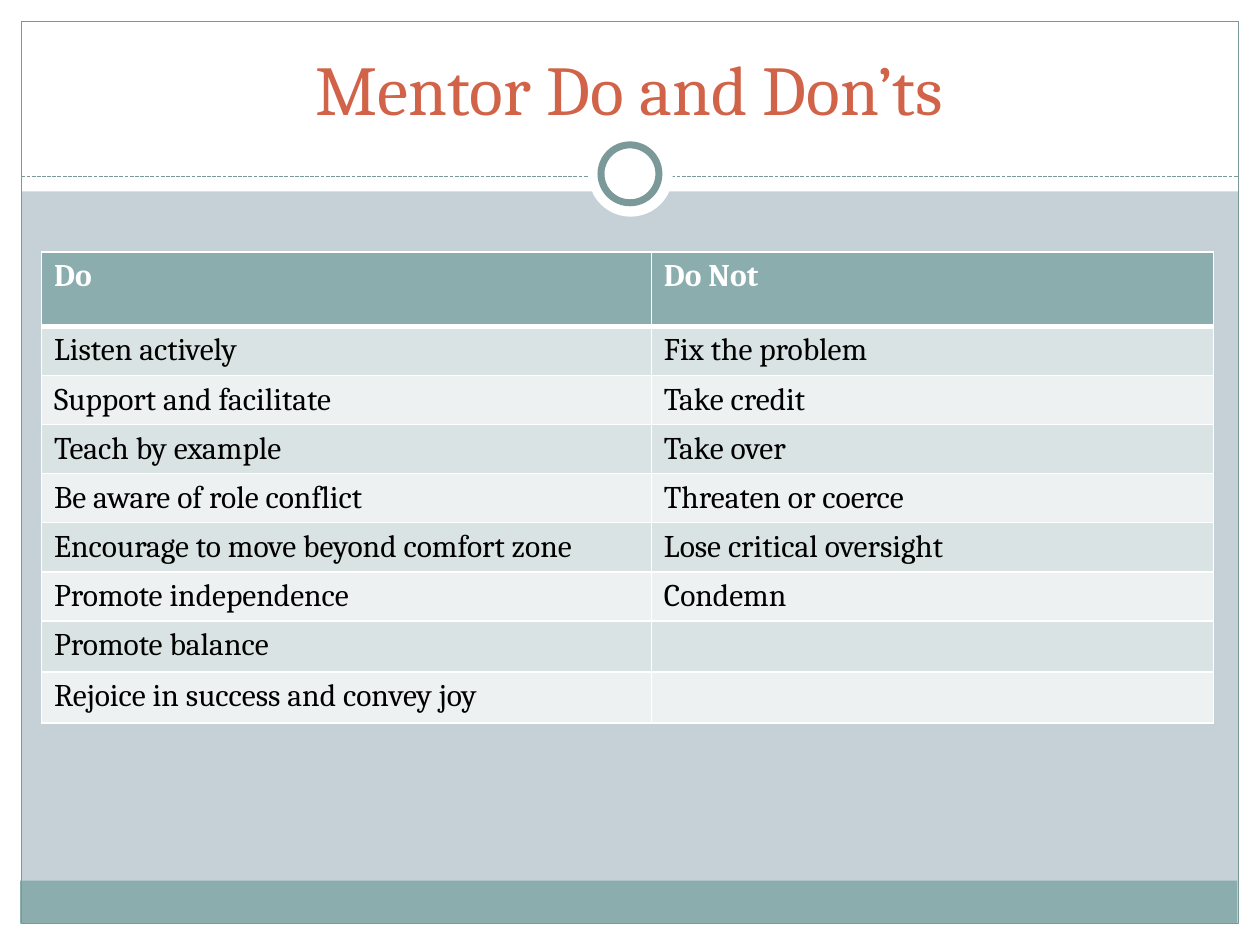
from typing import NamedTuple, Optional

from lxml.etree import SubElement
from pptx import Presentation
from pptx.dml.color import RGBColor
from pptx.enum.dml import MSO_LINE
from pptx.enum.shapes import MSO_CONNECTOR, MSO_SHAPE as Kind
from pptx.enum.text import MSO_ANCHOR, MSO_AUTO_SIZE, PP_ALIGN
from pptx.oxml import parse_xml
from pptx.oxml.ns import nsdecls, qn
from pptx.util import Inches, Pt

WHITE = RGBColor(0xFF, 0xFF, 0xFF)
BLACK = RGBColor(0x00, 0x00, 0x00)
BACK = RGBColor(0xC5, 0xD1, 0xD7)
TEAL = RGBColor(0x8C, 0xAD, 0xAE)
EDGE = RGBColor(0x7C, 0x99, 0x9A)
RUST = RGBColor(0xD1, 0x63, 0x49)
BANDS = (RGBColor(0xDA, 0xE3, 0xE3), RGBColor(0xEE, 0xF1, 0xF2))
FACE = "Cambria"


class Panel(NamedTuple):
    left: float
    top: float
    width: float
    height: float
    fill: Optional[RGBColor] = WHITE
    line: float = 0
    kind: Kind = Kind.RECTANGLE


FRAME = (
    Panel(0, 7.33, 10, 0.17),
    Panel(0, 0, 10, 1.52),
    Panel(0, 0, 0.17, 7.5),
    Panel(9.83, 0, 0.17, 7.5),
    Panel(0.16, 6.99, 9.66, 0.34, TEAL),
    Panel(0.17, 0.17, 9.66, 7.16, None, 0.75),
)
RING = (
    Panel(4.67, 1.05, 0.67, 0.67, kind=Kind.OVAL),
    Panel(4.77, 1.15, 0.46, 0.46, WHITE, 4, Kind.OVAL),
)
ROWS = (
    ("Do", "Do Not"),
    ("Listen actively", "Fix the problem"),
    ("Support and facilitate", "Take credit"),
    ("Teach by example", "Take over"),
    ("Be aware of role conflict", "Threaten or coerce"),
    ("Encourage to move beyond comfort zone", "Lose critical oversight"),
    ("Promote independence", "Condemn"),
    ("Promote balance", ""),
    ("Rejoice in success and convey joy", ""),
)
COLS = (4.84, 4.46)
HEAD, ROW = 0.59, 0.39


def add_panel(shapes, panel: Panel) -> None:
    box = (Inches(n) for n in panel[:4])
    shape = shapes.add_shape(panel.kind, *box)
    shape.shadow.inherit = False
    if panel.fill is None:
        shape.fill.background()
    else:
        shape.fill.solid()
        shape.fill.fore_color.rgb = panel.fill
    if panel.line:
        shape.line.color.rgb = EDGE
        shape.line.width = Pt(panel.line)
    else:
        shape.line.fill.background()


def add_rule(shapes) -> None:
    """Draw the dashed line under the title."""
    y = Inches(1.4)
    rule = shapes.add_connector(
        MSO_CONNECTOR.STRAIGHT, Inches(0.17), y, Inches(9.83), y)
    rule.line.color.rgb = EDGE
    rule.line.width = Pt(0.75)
    rule.line.dash_style = MSO_LINE.SQUARE_DOT
    SubElement(rule.element.spPr, qn("a:effectLst"))


def set_font(run, size: float, color: RGBColor, bold: bool = False) -> None:
    style = {"name": FACE, "size": Pt(size), "bold": bold}
    for name, value in style.items():
        setattr(run.font, name, value)
    run.font.color.rgb = color


def set_title(slide, text: str) -> None:
    title = slide.shapes.title
    place = {"left": 0.33, "top": 0.25, "width": 9.33, "height": 0.83}
    for name, value in place.items():
        setattr(title, name, Inches(value))
    frame = title.text_frame
    frame.auto_size = MSO_AUTO_SIZE.NONE
    frame.vertical_anchor = MSO_ANCHOR.BOTTOM
    para = frame.paragraphs[0]
    para.alignment = PP_ALIGN.CENTER
    run = para.add_run()
    run.text = text
    set_font(run, 40, RUST)
    slide.shapes.element.append(title.element)  # in front of the panels


def set_edges(cell, top: float, base: float) -> None:
    """Give a cell white borders, with widths in points."""
    widths = {"lnL": 1, "lnR": 1, "lnT": top, "lnB": base}
    props = cell._tc.get_or_add_tcPr()
    for i, (tag, width) in enumerate(widths.items()):
        props.insert(i, parse_xml(
            f'<a:{tag} {nsdecls("a")} w="{Pt(width)}"><a:solidFill>'
            f'<a:srgbClr val="{WHITE}"/></a:solidFill></a:{tag}>'))


def add_grid(shapes) -> None:
    high = HEAD + ROW * (len(ROWS) - 1)
    grid = shapes.add_table(
        len(ROWS), len(COLS), Inches(0.33), Inches(2),
        Inches(sum(COLS)), Inches(high)).table
    grid.horz_banding = False
    for col, width in zip(grid.columns, COLS):
        col.width = Inches(width)
    for r, texts in enumerate(ROWS):
        head = r == 0
        grid.rows[r].height = Inches(HEAD if head else ROW)
        for c, text in enumerate(texts):
            cell = grid.cell(r, c)
            cell.fill.solid()
            cell.fill.fore_color.rgb = TEAL if head else BANDS[(r - 1) % 2]
            set_edges(cell, 3 if r == 1 else 1, 3 if head else 1)
            if text:
                run = cell.text_frame.paragraphs[0].add_run()
                run.text = text
                set_font(run, 18, WHITE if head else BLACK, head)


def main() -> None:
    deck = Presentation()
    deck.slide_width, deck.slide_height = Inches(10), Inches(7.5)
    slide = deck.slides.add_slide(deck.slide_layouts.get_by_name("Title Only"))
    slide.background.fill.solid()
    slide.background.fill.fore_color.rgb = BACK
    for panel in FRAME:
        add_panel(slide.shapes, panel)
    add_rule(slide.shapes)
    for panel in RING:
        add_panel(slide.shapes, panel)
    set_title(slide, "Mentor Do and Don’ts")
    add_grid(slide.shapes)
    deck.save("out.pptx")


if __name__ == "__main__":
    main()
